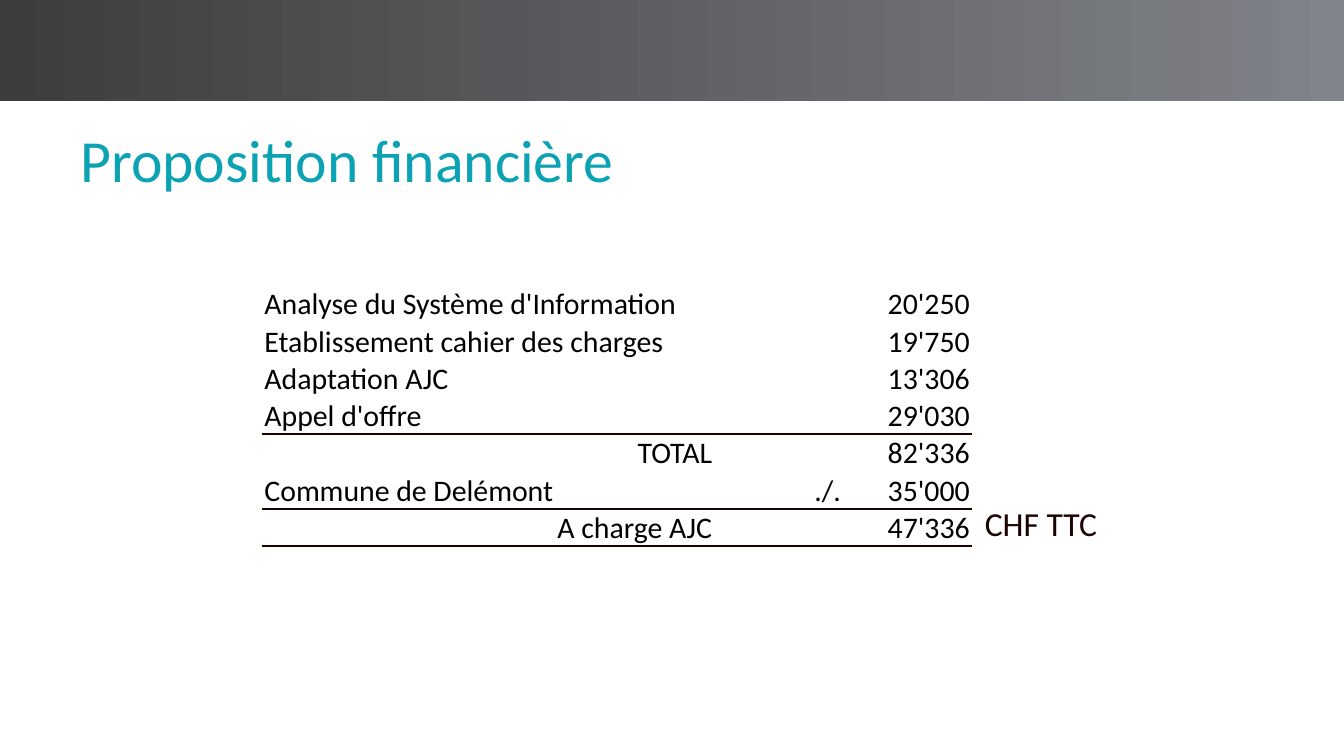
from dataclasses import dataclass

from lxml import etree
from pptx import Presentation
from pptx.dml.color import RGBColor
from pptx.enum import shapes, text
from pptx.oxml.ns import qn
from pptx.util import Pt

LEFT, RIGHT = text.PP_ALIGN.LEFT, text.PP_ALIGN.RIGHT


@dataclass(frozen=True)
class Theme:
    font: str = "Calibri"
    title: str = "0BA3B3"
    body: str = "000000"
    accent: str = "1C0403"
    band_start: str = "3D3D3D"
    band_end: str = "808389"
    title_size: int = 32
    note_size: int = 18
    table_size: int = 16
    rule_width: int = 1


class SlideBuilder:
    def __init__(self, slide, theme):
        self.slide, self.theme = slide, theme

    def add_words(self, paragraph, words, size, color, align=LEFT):
        paragraph.alignment = align
        run = paragraph.add_run()
        run.text = words
        for name, value in {"name": self.theme.font, "size": Pt(size)}.items():
            setattr(run.font, name, value)
        run.font.color.rgb = RGBColor.from_string(color)

    def band(self, left, top, width, height):
        shape = self.slide.shapes.add_shape(
            shapes.MSO_SHAPE.RECTANGLE, Pt(left), Pt(top), Pt(width), Pt(height))
        shape.shadow.inherit = False
        shape.line.fill.background()
        shape.fill.gradient()
        shape.fill.gradient_angle = 0
        colors = self.theme.band_start, self.theme.band_end
        for position, (stop, color) in enumerate(zip(shape.fill.gradient_stops, colors)):
            stop.position = position
            stop.color.rgb = RGBColor.from_string(color)

    def label(self, box, words, size, color, **frame_format):
        shape = self.slide.shapes.add_textbox(*map(Pt, box))
        for name, value in frame_format.items():
            setattr(shape.text_frame, name, value)
        self.add_words(shape.text_frame.paragraphs[0], words, size, color)

    def border(self, cell, side):
        properties = cell._tc.get_or_add_tcPr()
        line = etree.Element(qn(f"a:{side}"), w=str(Pt(self.theme.rule_width)))
        fill = etree.SubElement(line, qn("a:solidFill"))
        etree.SubElement(fill, qn("a:srgbClr"), val=self.theme.accent)
        properties.insert(0, line)

    def cell(self, cell, words, align):
        cell_format = {
            "margin_left": Pt(0.7), "margin_right": Pt(0.7),
            "margin_top": Pt(0.7), "margin_bottom": Pt(0),
            "vertical_anchor": text.MSO_ANCHOR.BOTTOM,
        }
        for name, value in cell_format.items():
            setattr(cell, name, value)
        cell.fill.background()
        paragraph = cell.text_frame.paragraphs[0]
        if words:
            self.add_words(paragraph, words, self.theme.table_size, self.theme.body, align)
        else:  # keeps an empty cell from stretching its row
            etree.SubElement(paragraph._p, qn("a:endParaRPr"),
                             sz=str(self.theme.table_size * 100))

    def table(self, left, top, widths, row_height, rows, ruled_rows):
        frame = self.slide.shapes.add_table(
            len(rows), len(widths), Pt(left), Pt(top),
            Pt(sum(widths)), Pt(row_height * len(rows)))
        table = frame.table
        table.first_row = table.horz_banding = False
        for column, width in zip(table.columns, widths):
            column.width = Pt(width)
        for r, (label, label_align, sign, amount) in enumerate(rows):
            table.rows[r].height = Pt(row_height)
            entries = (label, label_align), (sign, RIGHT), (amount, RIGHT)
            for c, (words, align) in enumerate(entries):
                cell = table.cell(r, c)
                self.cell(cell, words, align)
                # Inserted in front, so the bottom line goes first
                if r in ruled_rows:
                    self.border(cell, "lnB")
                if r - 1 in ruled_rows:
                    self.border(cell, "lnT")


def main():
    presentation = Presentation()
    presentation.slide_width, presentation.slide_height = Pt(720), Pt(405)
    theme = Theme()
    slide = presentation.slides.add_slide(presentation.slide_layouts[6])
    builder = SlideBuilder(slide, theme)

    # Header band and title
    builder.band(0, 0, 720, 54)
    builder.label((36, 59, 648.7, 52), "Proposition financière",
                  theme.title_size, theme.title, word_wrap=True,
                  vertical_anchor=text.MSO_ANCHOR.MIDDLE)

    # Cost table, with rules around the totals
    rows = [
        ("Analyse du Système d'Information", LEFT, "", "20'250"),
        ("Etablissement cahier des charges", LEFT, "", "19'750"),
        ("Adaptation AJC", LEFT, "", "13'306"),
        ("Appel d'offre", LEFT, "", "29'030"),
        ("TOTAL", RIGHT, "", "82'336"),
        ("Commune de Delémont", LEFT, "./.", "35'000"),
        ("A charge AJC", RIGHT, "", "47'336"),
    ]
    builder.table(141, 152.7, (241.2, 69, 69), 20, rows, ruled_rows={3, 5, 6})

    # Currency note
    builder.label((520.5, 266, 75.6, 29), "CHF TTC", theme.note_size, theme.accent,
                  word_wrap=False, auto_size=text.MSO_AUTO_SIZE.SHAPE_TO_FIT_TEXT)

    presentation.save("out.pptx")


if __name__ == "__main__":
    main()
